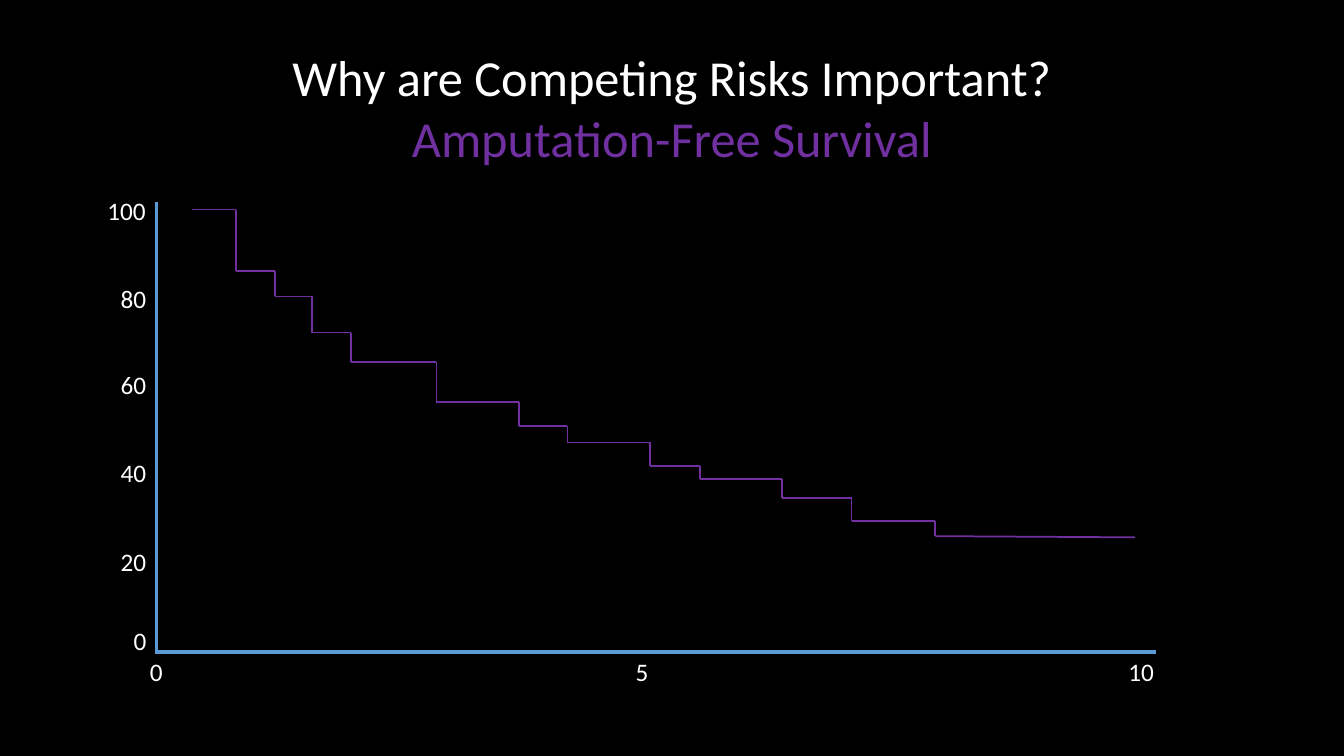
from lxml import etree
from pptx import Presentation
from pptx.dml.color import RGBColor
from pptx.enum.shapes import MSO_CONNECTOR
from pptx.enum.text import MSO_ANCHOR, MSO_AUTO_SIZE, PP_ALIGN
from pptx.oxml.ns import qn
from pptx.util import Cm, Pt

STRAIGHT = MSO_CONNECTOR.STRAIGHT
TOP = MSO_ANCHOR.TOP
GROW = MSO_AUTO_SIZE.SHAPE_TO_FIT_TEXT
CENTER = PP_ALIGN.CENTER

BLACK = RGBColor(0x00, 0x00, 0x00)
WHITE = RGBColor(0xFF, 0xFF, 0xFF)
BLUE = RGBColor(0x5B, 0x9B, 0xD5)
PURPLE = RGBColor(0x70, 0x30, 0xA0)
FONT = "Calibri"

# Lengths in centimetres
AXIS_X, AXIS_Y = 3.94, 16.43
LABEL_EDGE = 3.96
Y_LABELS = [("100", 4.8), ("80", 7.01), ("60", 9.17),
            ("40", 11.4), ("20", 13.64), ("0", 15.62)]
X_LABELS = [("0", 3.53), ("5", 15.77), ("10", 28.19)]

# Each step of the curve: where it starts and its height on the slide
STEPS = [(4.85, 5.28), (5.94, 6.83), (6.93, 7.47), (7.87, 8.38),
         (8.84, 9.12), (11, 10.13), (13.08, 10.74), (14.3, 11.15),
         (16.38, 11.75), (17.65, 12.07), (19.71, 12.55),
         (21.46, 13.13), (23.57, 13.51)]
CURVE_END = (28.6, 13.54)


def add_run(para, text, size, color):
    run = para.add_run()
    run.text = text
    run.font.name = FONT
    run.font.size = Pt(size)
    run.font.color.rgb = color


def add_title(slide, lines):
    title = slide.shapes.title
    title.left, title.top = Cm(5.99), Cm(1.04)
    title.width, title.height = Cm(21.89), Cm(3.33)
    frame = title.text_frame
    frame.word_wrap = True
    frame.auto_size = GROW
    frame.vertical_anchor = TOP
    for i, (text, color) in enumerate(lines):
        para = frame.add_paragraph() if i else frame.paragraphs[0]
        para.alignment = CENTER
        add_run(para, text, 36, color)


def label_width(text):
    return 0.51 + 0.33 * len(text)


def add_label(slide, text, left, top):
    box = slide.shapes.add_textbox(
        Cm(left), Cm(top), Cm(label_width(text)), Cm(1.02))
    frame = box.text_frame
    frame.word_wrap = False
    frame.auto_size = GROW
    add_run(frame.paragraphs[0], text, 18, WHITE)


def add_line(slide, start, end, color, width):
    line = slide.shapes.add_connector(
        STRAIGHT, *(Cm(n) for n in (*start, *end)))
    line.line.color.rgb = color
    line.line.width = Pt(width)
    etree.SubElement(line.element.spPr, qn("a:effectLst"))


def add_curve(slide):
    for (x, y), (next_x, next_y) in zip(STEPS, STEPS[1:]):
        add_line(slide, (x, y), (next_x, y), PURPLE, 1.25)
        add_line(slide, (next_x, y), (next_x, next_y), PURPLE, 1.25)
    add_line(slide, STEPS[-1], CURVE_END, PURPLE, 1.25)


def main():
    deck = Presentation()
    deck.slide_width, deck.slide_height = Cm(33.87), Cm(19.05)
    slide = deck.slides.add_slide(deck.slide_layouts[5])
    fill = slide.background.fill
    fill.solid()
    fill.fore_color.rgb = BLACK

    # Title
    add_title(slide, [("Why are Competing Risks Important?", WHITE),
                      ("Amputation-Free Survival", PURPLE)])

    # Axes
    add_line(slide, (AXIS_X, 5.08), (AXIS_X, 16.46), BLUE, 2.5)
    add_line(slide, (29.13, AXIS_Y), (3.91, AXIS_Y), BLUE, 2.5)

    # Axis labels
    for text, top in Y_LABELS:
        add_label(slide, text, LABEL_EDGE - label_width(text), top)
    for text, left in X_LABELS:
        add_label(slide, text, left, 16.42)

    # Survival curve
    add_curve(slide)

    deck.save("out.pptx")


if __name__ == "__main__":
    main()
